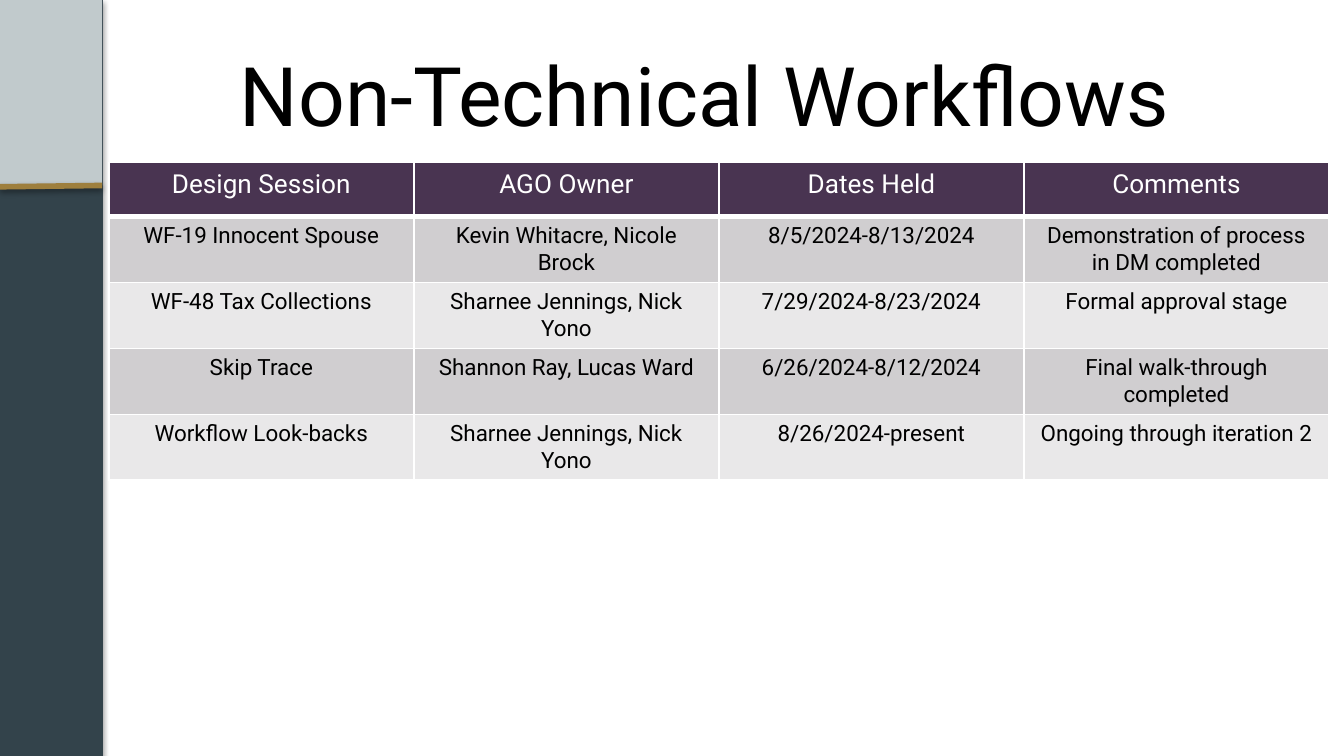
from lxml.etree import SubElement
from pptx import Presentation
from pptx.dml.color import RGBColor
from pptx.enum.shapes import MSO_CONNECTOR, MSO_SHAPE
from pptx.enum.text import MSO_ANCHOR, PP_ALIGN
from pptx.oxml.ns import qn
from pptx.util import Inches, Pt

BLACK = RGBColor(0x00, 0x00, 0x00)
WHITE = RGBColor(0xFF, 0xFF, 0xFF)
SLATE = RGBColor(0x33, 0x43, 0x4B)
PALE_SLATE = RGBColor(0xC1, 0xCA, 0xCC)
GOLD = RGBColor(0x9E, 0x7F, 0x3D)
PURPLE = RGBColor(0x49, 0x34, 0x51)
BANDS = (RGBColor(0xD0, 0xCE, 0xD0), RGBColor(0xE9, 0xE8, 0xE9))

FONT = "Roboto"
TITLE = "Non-Technical Workflows"
ROWS = [
    ("Design Session", "AGO Owner", "Dates Held", "Comments"),
    ("WF-19 Innocent Spouse", "Kevin Whitacre, Nicole Brock",
     "8/5/2024-8/13/2024", "Demonstration of process in DM completed"),
    ("WF-48 Tax Collections", "Sharnee Jennings, Nick Yono",
     "7/29/2024-8/23/2024", "Formal approval stage"),
    ("Skip Trace", "Shannon Ray, Lucas Ward",
     "6/26/2024-8/12/2024", "Final walk-through completed"),
    ("Workflow Look-backs", "Sharnee Jennings, Nick Yono",
     "8/26/2024-present", "Ongoing through iteration 2"),
]

SLIDE_WIDTH = 10
SLIDE_HEIGHT = SLIDE_WIDTH * 9 / 16
SIDEBAR_WIDTH = 0.76
TABLE_LEFT, TABLE_TOP = 0.81, 1.21
COLUMN_WIDTH, ROW_HEIGHT = 2.27, 0.4


def write_text(text_frame, text, size, color):
    text_frame.text = text
    paragraph = text_frame.paragraphs[0]
    paragraph.alignment = PP_ALIGN.CENTER
    font = paragraph.runs[0].font
    for name, value in {"name": FONT, "size": Pt(size), "bold": False}.items():
        setattr(font, name, value)
    font.color.rgb = color


def add_shadow(shape, opacity, blur, distance):
    """Add a black shadow falling straight down; blur and distance in points."""
    effects = SubElement(shape._element.spPr, qn("a:effectLst"))
    shadow = SubElement(effects, qn("a:outerShdw"), blurRad=str(Pt(blur)),
                        dist=str(Pt(distance)), dir="5400000", rotWithShape="0")
    color = SubElement(shadow, qn("a:srgbClr"), val=str(BLACK))
    SubElement(color, qn("a:alpha"), val=str(opacity * 1000))


def add_panel(slide, height, color):
    panel = slide.shapes.add_shape(MSO_SHAPE.RECTANGLE, 0, 0,
                                   Inches(SIDEBAR_WIDTH), Inches(height))
    panel.fill.solid()
    panel.fill.fore_color.rgb = color
    return panel


def add_sidebar(slide):
    sidebar = add_panel(slide, SLIDE_HEIGHT, SLATE)
    sidebar.line.color.rgb = SLATE
    sidebar.line.width = Pt(0.75)
    add_shadow(sidebar, 35, 3.1, 1.8)

    top_panel = add_panel(slide, 1.38, PALE_SLATE)
    top_panel.line.fill.background()
    top_panel.shadow.inherit = False

    divider = slide.shapes.add_connector(
        MSO_CONNECTOR.STRAIGHT, 0, Inches(1.39), Inches(SIDEBAR_WIDTH), Inches(1.38))
    divider.line.color.rgb = GOLD
    divider.line.width = Pt(3)
    add_shadow(divider, 38, 3.1, 1.6)


def add_title(slide):
    title = slide.shapes.title
    place = {"left": 0.99, "top": 0.23, "width": 8.51, "height": 0.94}
    for name, value in place.items():
        setattr(title, name, Inches(value))
    title.text_frame.vertical_anchor = MSO_ANCHOR.MIDDLE
    write_text(title.text_frame, TITLE, 44, BLACK)


def set_borders(cell, widths):
    properties = cell._tc.get_or_add_tcPr()
    for side, width in widths.items():
        line = SubElement(properties, qn(f"a:ln{side}"), w=str(Pt(width)))
        fill = SubElement(line, qn("a:solidFill"))
        SubElement(fill, qn("a:srgbClr"), val=str(WHITE))


def add_session_table(slide):
    column_count = len(ROWS[0])
    table = slide.shapes.add_table(
        len(ROWS), column_count, Inches(TABLE_LEFT), Inches(TABLE_TOP),
        Inches(COLUMN_WIDTH * column_count), Inches(ROW_HEIGHT * len(ROWS))).table
    for column in table.columns:
        column.width = Inches(COLUMN_WIDTH)
    for row_index, texts in enumerate(ROWS):
        table.rows[row_index].height = Inches(ROW_HEIGHT)
        is_header = row_index == 0
        fill_color = PURPLE if is_header else BANDS[(row_index - 1) % 2]
        size, text_color = (14, WHITE) if is_header else (12, BLACK)
        widths = {"L": 1, "R": 1, "T": 3 if row_index == 1 else 1,
                  "B": 3 if is_header else 1}
        for column_index, text in enumerate(texts):
            cell = table.cell(row_index, column_index)
            set_borders(cell, widths)
            cell.fill.solid()
            cell.fill.fore_color.rgb = fill_color
            write_text(cell.text_frame, text, size, text_color)


def main():
    presentation = Presentation()
    presentation.slide_width = Inches(SLIDE_WIDTH)
    presentation.slide_height = Inches(SLIDE_HEIGHT)
    slide = presentation.slides.add_slide(presentation.slide_layouts[5])
    slide.background.fill.solid()
    slide.background.fill.fore_color.rgb = WHITE
    add_sidebar(slide)
    add_title(slide)
    add_session_table(slide)
    presentation.save("out.pptx")


if __name__ == "__main__":
    main()
